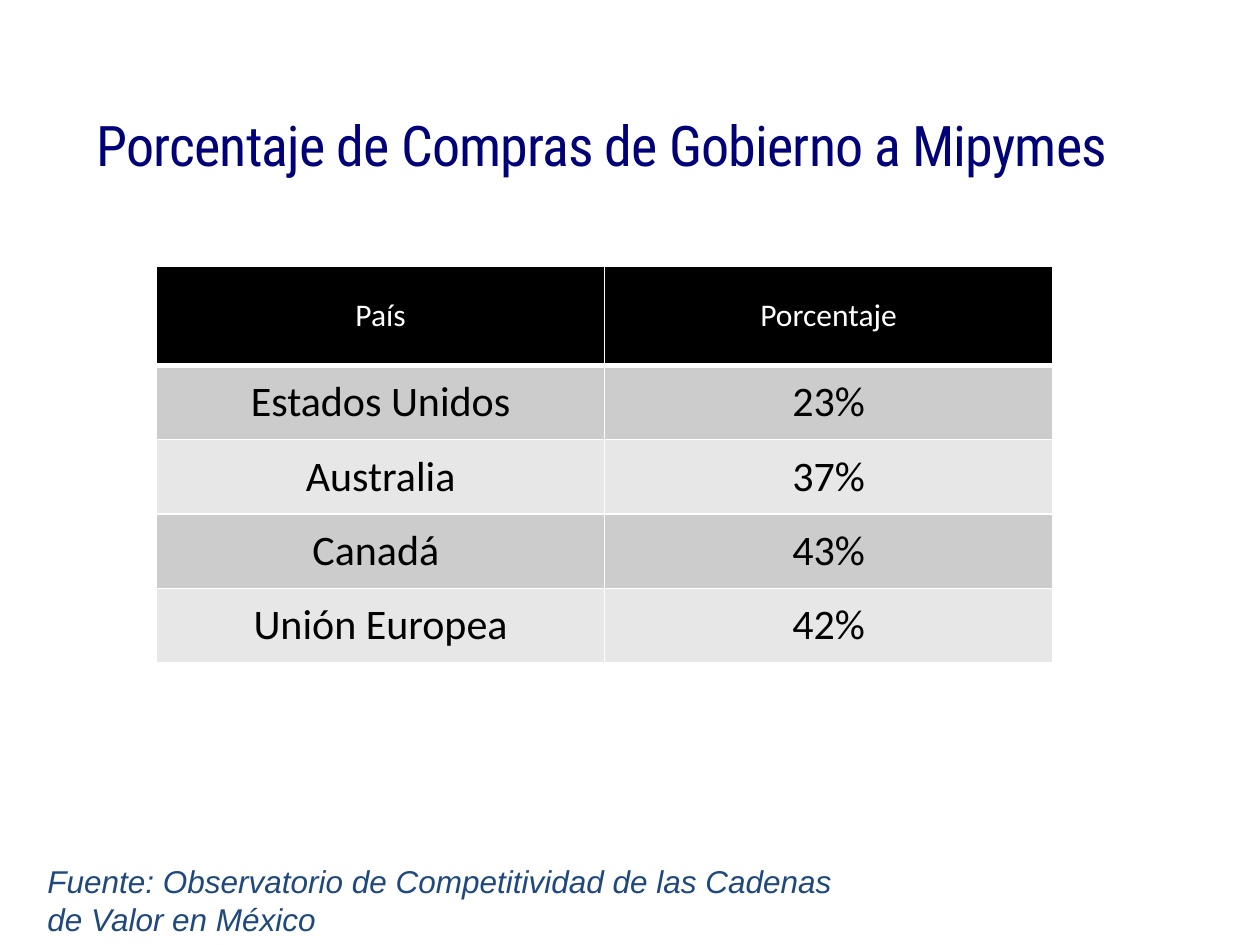
from lxml import etree
from pptx import Presentation
from pptx.dml.color import RGBColor
from pptx.enum import text as t
from pptx.oxml import ns
from pptx.util import Pt

ROWS = [
    ("País", "Porcentaje"),
    ("Estados Unidos", "23%"),
    ("Australia", "37%"),
    ("Canadá ", "43%"),
    ("Unión Europea", "42%"),
]


def color(code):
    """Turn a hex string into a colour."""
    return RGBColor.from_string(code)


def write(frame, words, font="Calibri", size=18, ink="000000", italic=False,
          align=t.PP_ALIGN.LEFT, anchor=t.MSO_ANCHOR.TOP, lead=None, track=None):
    """Put one formatted paragraph in a text frame."""
    frame.word_wrap = True
    frame.vertical_anchor = anchor
    para = frame.paragraphs[0]
    para.alignment = align
    if lead:
        para.line_spacing = lead
    run = para.add_run()
    run.text = words
    run.font.name = font
    run.font.size = Pt(size)
    run.font.italic = italic
    run.font.color.rgb = color(ink)
    if track:
        run.font._element.set("spc", str(round(track * 100)))


def label(slide, box, words, **style):
    """Add a text box in the given box."""
    shape = slide.shapes.add_textbox(*map(Pt, box))
    write(shape.text_frame, words, **style)


def edge(cell, base):
    """Draw white borders round a cell, with its own bottom width."""
    props = cell._tc.get_or_add_tcPr()
    widths = {"lnL": 1, "lnR": 1, "lnT": 1, "lnB": base}
    for spot, (side, width) in enumerate(widths.items()):
        line = etree.Element(ns.qn("a:" + side), w=str(Pt(width)))
        fill = etree.SubElement(line, ns.qn("a:solidFill"))
        etree.SubElement(fill, ns.qn("a:srgbClr"), val="FFFFFF")
        props.insert(spot, line)


def table(slide, box, rows, head):
    """Add a banded table with a header row of the given height."""
    left, top, width, height = box
    grid = slide.shapes.add_table(len(rows), len(rows[0]), *map(Pt, box)).table
    for col in grid.columns:
        col.width = Pt(width / len(rows[0]))
    for i, row in enumerate(rows):
        first = i == 0
        grid.rows[i].height = Pt(head if first else (height - head) / (len(rows) - 1))
        for j, words in enumerate(row):
            cell = grid.cell(i, j)
            cell.fill.solid()
            cell.fill.fore_color.rgb = color(
                "000000" if first else "CCCCCC" if i % 2 else "E7E7E7")
            cell.vertical_anchor = t.MSO_ANCHOR.MIDDLE
            write(cell.text_frame, words, size=18 if first else 24,
                  ink="FFFFFF" if first else "000000",
                  align=t.PP_ALIGN.CENTER, anchor=t.MSO_ANCHOR.MIDDLE)
            cell.margin_left = cell.margin_right = Pt(5.2)
            cell.margin_top = cell.margin_bottom = Pt(3.6)
            edge(cell, 3 if first else 1)


def main():
    """Build the slide and save it."""
    deck = Presentation()
    deck.slide_width, deck.slide_height = Pt(720), Pt(540)
    slide = deck.slides.add_slide(deck.slide_layouts[6])
    table(slide, (89.5, 152, 512, 226.8), ROWS, 56.8)
    label(slide, (48.2, 55.4, 594, 49.7), "Porcentaje de Compras de Gobierno a Mipymes",
          font="Roboto Condensed", size=32, ink="000078",
          anchor=t.MSO_ANCHOR.BOTTOM, lead=0.85, track=-0.5)
    label(slide, (20, 489, 486, 51),
          "Fuente: Observatorio de Competitividad de las Cadenas de Valor en México",
          font="Arial", ink="1F497D", italic=True)
    deck.save("out.pptx")


if __name__ == "__main__":
    main()
